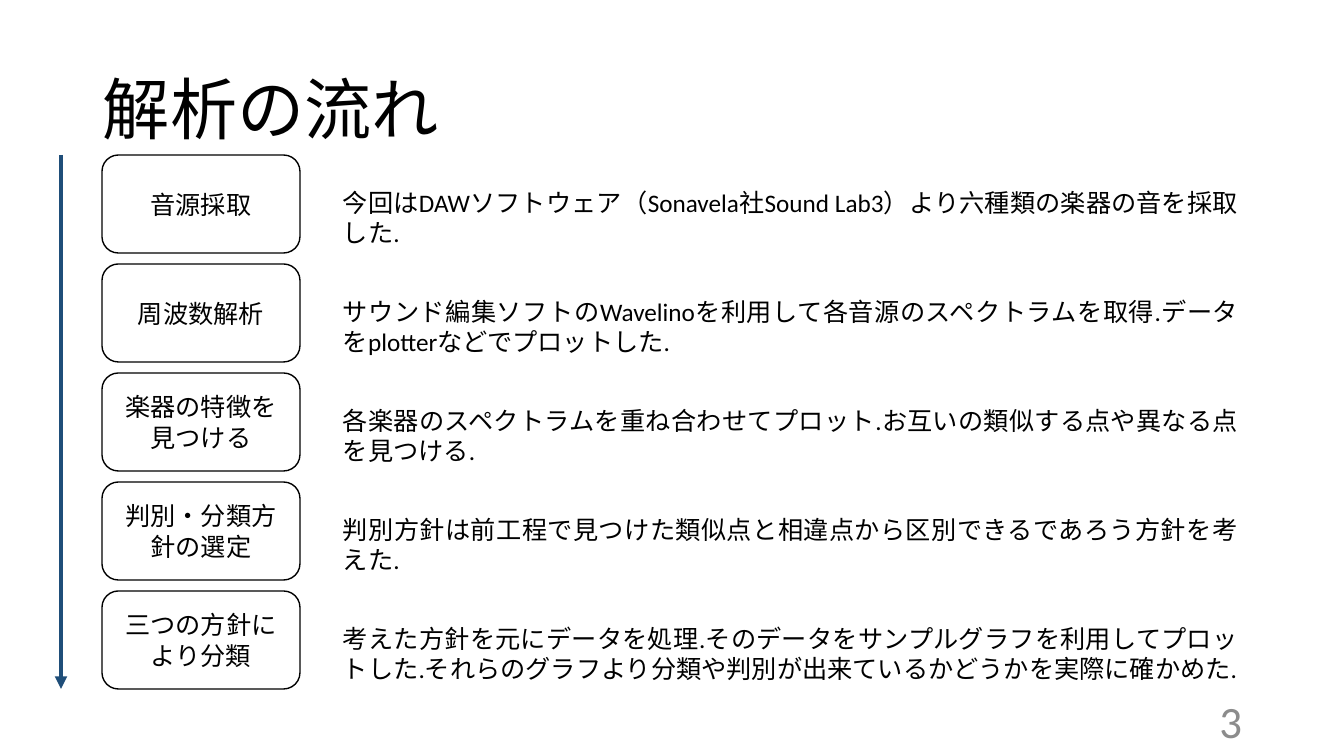
from pptx import Presentation
from pptx.dml.color import RGBColor
from pptx.enum.shapes import MSO_CONNECTOR, MSO_SHAPE
from pptx.enum.text import MSO_ANCHOR, MSO_AUTO_SIZE, PP_ALIGN
from pptx.oxml.ns import qn
from pptx.util import Pt
from lxml import etree

ROUND = MSO_SHAPE.ROUNDED_RECTANGLE
LINE = MSO_CONNECTOR.STRAIGHT
MID, TOP = MSO_ANCHOR.MIDDLE, MSO_ANCHOR.TOP
LEFT, RIGHT = PP_ALIGN.LEFT, PP_ALIGN.RIGHT
MIDDLE, FULL = PP_ALIGN.CENTER, PP_ALIGN.JUSTIFY
GROW = MSO_AUTO_SIZE.SHAPE_TO_FIT_TEXT

# Content: each step has a label, a note and the note's height
TITLE = "解析の流れ"
PAGE = "3"
STEPS = [
    ("音源採取",
     "今回はDAWソフトウェア（Sonavela社Sound Lab3）より六種類の楽器の音を採取した.", 71),
    ("周波数解析",
     "サウンド編集ソフトのWavelinoを利用して各音源のスペクトラムを取得."
     "データをplotterなどでプロットした.", 71),
    ("楽器の特徴を見つける",
     "各楽器のスペクトラムを重ね合わせてプロット."
     "お互いの類似する点や異なる点を見つける.", 71),
    ("判別・分類方針の選定",
     "判別方針は前工程で見つけた類似点と相違点から区別できるであろう方針を考えた.", 71),
    ("三つの方針により分類",
     "考えた方針を元にデータを処理.そのデータをサンプルグラフを利用してプロットした."
     "それらのグラフより分類や判別が出来ているかどうかを実際に確かめた.", 102),
]

THEME = {
    "font": "Calibri",
    "ink": RGBColor(0x00, 0x00, 0x00),
    "paper": RGBColor(0xFF, 0xFF, 0xFF),
    "grey": RGBColor(0x8C, 0x8C, 0x8C),
    "arrow": RGBColor(0x1F, 0x4E, 0x79),
    "title": 48,
    "page": 32,
    "body": 18,
}

# Layout in px
WIDE, HIGH = 1344, 756
START, PITCH = 155, 109
BOX_X, BOX_W, BOX_H = 102, 198, 98
NOTE_X, NOTE_W, NOTE_DROP = 333, 915, 27
ARROW_X = 61


def px(n):
    return round(n * 914400 / 100.8)


def write(shape, text, size, color, align, anchor):
    frame = shape.text_frame
    frame.word_wrap = True
    frame.vertical_anchor = anchor
    para = frame.paragraphs[0]
    para.text = text
    para.alignment = align
    para.font.name = THEME["font"]
    para.font.size = Pt(THEME[size])
    para.font.color.rgb = THEME[color]
    return frame


def add_text(slide, area, *style):
    box = slide.shapes.add_textbox(*map(px, area))
    return write(box, *style)


def add_step(slide, top, label, note, high):
    area = (NOTE_X, top + NOTE_DROP, NOTE_W, high)
    frame = add_text(slide, area, note, "body", "ink", FULL, TOP)
    frame.auto_size = GROW
    box = slide.shapes.add_shape(
        ROUND, *map(px, (BOX_X, top, BOX_W, BOX_H)))
    box.shadow.inherit = False
    box.fill.solid()
    box.fill.fore_color.rgb = THEME["paper"]
    box.line.color.rgb = THEME["ink"]
    box.line.width = Pt(1)
    write(box, label, "body", "ink", MIDDLE, MID)


def add_arrow(slide, x, top, end):
    arrow = slide.shapes.add_connector(LINE, *map(px, (x, top, x, end)))
    arrow.line.color.rgb = THEME["arrow"]
    arrow.line.width = Pt(3)
    etree.SubElement(arrow.line._get_or_add_ln(), qn("a:tailEnd"),
                     type="triangle")
    etree.SubElement(arrow._element.spPr, qn("a:effectLst"))


def main():
    deck = Presentation()
    deck.slide_width, deck.slide_height = px(WIDE), px(HIGH)
    slide = deck.slides.add_slide(deck.slide_layouts[6])

    # Title and page number
    head = add_text(slide, (93, 40, 1159, 146),
                    TITLE, "title", "ink", LEFT, MID)
    head.paragraphs[0].line_spacing = 0.9
    add_text(slide, (950, 701, 302, 40), PAGE, "page", "grey", RIGHT, MID)

    # Steps from top to bottom
    for i, step in enumerate(STEPS):
        add_step(slide, START + i * PITCH, *step)

    # Arrow beside the steps
    end = START + (len(STEPS) - 1) * PITCH + BOX_H
    add_arrow(slide, ARROW_X, START, end)

    deck.save("out.pptx")


if __name__ == "__main__":
    main()
